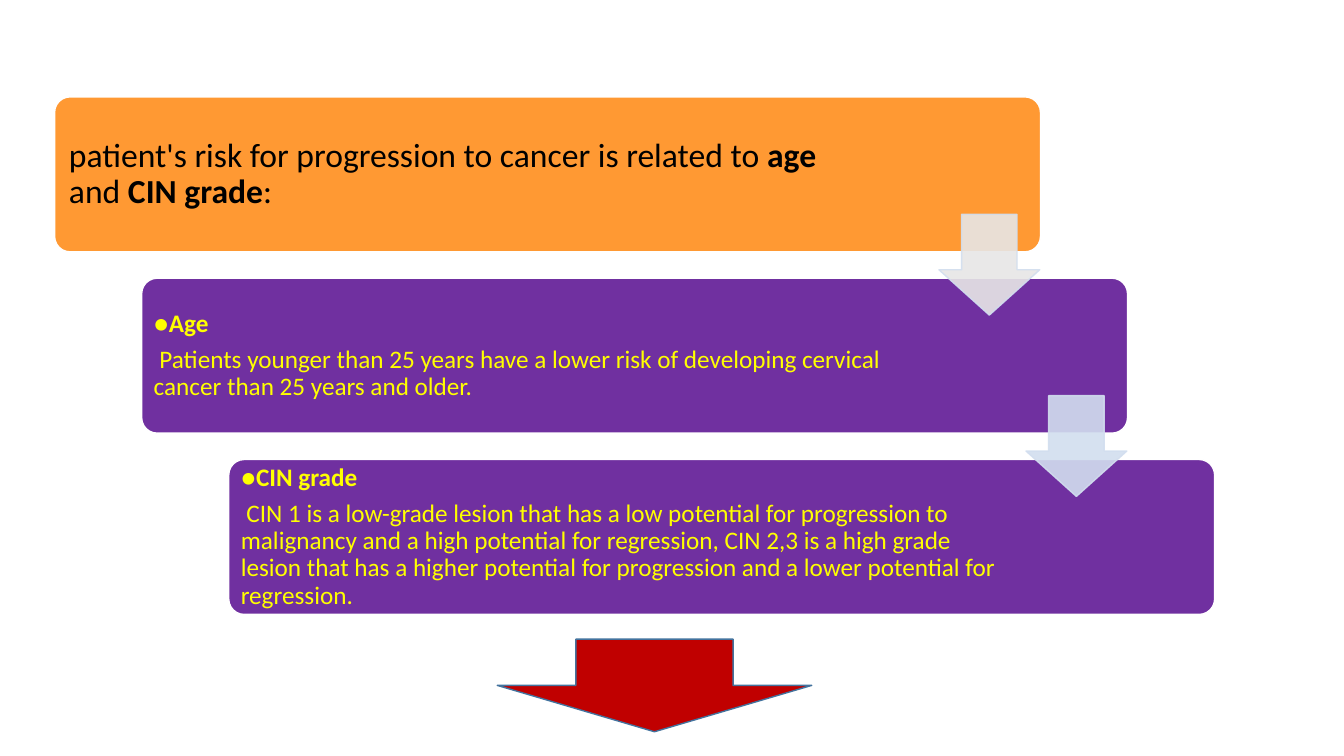
from lxml import etree
from pptx import Presentation
from pptx import util as u
from pptx.dml.color import RGBColor
from pptx.enum import shapes, text
from pptx.oxml import ns

ORANGE = RGBColor(0xFF, 0x99, 0x33)
PURPLE = RGBColor(0x70, 0x30, 0xA0)
YELLOW = RGBColor(0xFF, 0xFF, 0x00)
BLACK = RGBColor(0x00, 0x00, 0x00)
WHITE = RGBColor(0xFF, 0xFF, 0xFF)
GREY = RGBColor(0xE7, 0xE6, 0xE6)
PALE = RGBColor(0xD2, 0xDE, 0xEF)
RED = RGBColor(0xC0, 0x00, 0x00)
BLUE = RGBColor(0x43, 0x73, 0x9E)


class Board:
    """Holds the style and the current slide."""

    font = "Calibri"
    edge = 1
    lead = 0.9
    gap = 0.35  # space after, as a share of the text size

    def __init__(self, slide):
        self.slide = slide

    def shape(self, kind, box, fill, line, adj=(), alpha=None):
        item = self.slide.shapes.add_shape(kind, *map(u.Pt, box))
        item.shadow.inherit = False
        for i, value in enumerate(adj):
            item.adjustments[i] = value
        item.fill.solid()
        item.fill.fore_color.rgb = fill
        item.line.color.rgb = line
        item.line.width = u.Pt(self.edge)
        if alpha:
            for clr in item._element.spPr.iter(ns.qn("a:srgbClr")):
                etree.SubElement(clr, ns.qn("a:alpha"), val=str(alpha * 1000))

    def card(self, box, fill):
        self.shape(shapes.MSO_SHAPE.ROUNDED_RECTANGLE, box, fill, WHITE, [0.1])

    def arrow(self, box, fill, line, **extra):
        self.shape(shapes.MSO_SHAPE.DOWN_ARROW, box, fill, line, **extra)

    def words(self, box, paras, size, color, inset):
        """Each paragraph is a list of (text, bold) runs."""
        frame = self.slide.shapes.add_textbox(*map(u.Pt, box)).text_frame
        pad = u.Pt(inset)
        form = {"word_wrap": True, "vertical_anchor": text.MSO_ANCHOR.MIDDLE,
                "margin_left": pad, "margin_right": pad,
                "margin_top": pad, "margin_bottom": pad}
        for key, value in form.items():
            setattr(frame, key, value)
        for i, runs in enumerate(paras):
            para = frame.add_paragraph() if i else frame.paragraphs[0]
            para.line_spacing = self.lead
            para.space_after = u.Pt(size * self.gap)
            for words, bold in runs:
                run = para.add_run()
                run.text = words
                run.font.color.rgb = color
                form = {"name": self.font, "size": u.Pt(size), "bold": bold}
                for key, value in form.items():
                    setattr(run.font, key, value)


RISK = [[("patient's risk for progression to cancer is related to ", False),
         ("age ", True), ("and ", False), ("CIN grade", True), (":", False)]]
AGE = [[("●", False), ("Age ", True)],
       [(" Patients younger than 25 years have a lower risk of developing "
         "cervical cancer than 25 years and older.", False)]]
GRADE = [[("●", False), ("CIN grade ", True)],
         [(" CIN 1 is a low-grade lesion that has a low potential for "
           "progression to malignancy and a high potential for regression, "
           "CIN 2,3 is a high grade lesion that has a higher potential for "
           "progression and a lower potential for regression.", False)]]

# fill, paragraphs, text size, text colour, text width, inset
STEPS = [(ORANGE, RISK, 24, BLACK, 584, 7.2),
         (PURPLE, AGE, 18, YELLOW, 563, 5.4),
         (PURPLE, GRADE, 18, YELLOW, 563, 5.4)]
LEFT, TOP, WIDE, HIGH = 39, 69.2, 704.2, 110.7
DX, DY = 62.2, 129.5


def main():
    deck = Presentation()
    deck.slide_width, deck.slide_height = u.Pt(960), u.Pt(540)
    board = Board(deck.slides.add_slide(deck.slide_layouts[6]))

    # Staircase of cards
    for i, (fill, paras, size, color, wide, inset) in enumerate(STEPS):
        x, y = LEFT + i * DX, TOP + i * DY
        board.card((x, y, WIDE, HIGH), fill)
        board.words((x + 3.2, y + 3.2, wide, HIGH - 6.4),
                    paras, size, color, inset)

    # Arrows from step to step
    for i, fill in enumerate([GREY, PALE]):
        board.arrow((670.7 + i * DX, 153.1 + i * DY, 72, 72), fill, PALE,
                    adj=[0.55, 0.45], alpha=90)

    # Closing arrow
    board.arrow((355.2, 456.5, 224.6, 66.2), RED, BLUE)

    deck.save("out.pptx")


if __name__ == "__main__":
    main()
